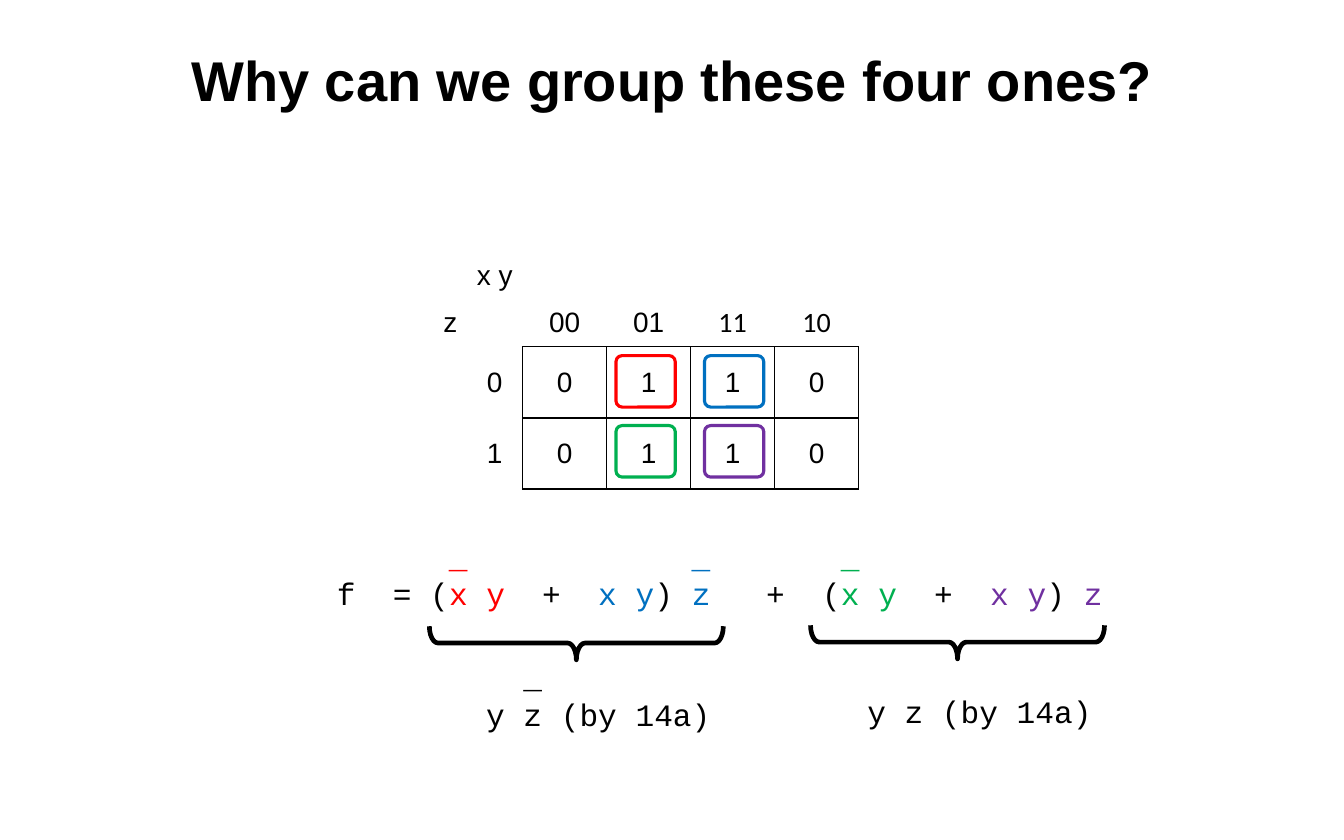
from lxml import etree
from pptx import Presentation
from pptx import util as u
from pptx.dml.color import RGBColor
from pptx.enum import shapes, text
from pptx.oxml.ns import qn

COLORS = {"black": "000000", "white": "FFFFFF", "red": "FF0000",
          "blue": "0070C0", "green": "00B050", "purple": "7030A0"}
MAP_ROWS = [["", "x y", "", "", "", ""],
            ["z", "", "00", "01", "11", "10"],
            ["", "0", "0", "1", "1", "0"],
            ["", "1", "0", "1", "1", "0"]]
BARS = [(6, "_", "red"), (19, "_", "blue"), (27, "_", "green")]
FORMULA = [(0, "f", "black"), (3, "= (", "black"), (6, "x y", "red"),
           (11, "+", "black"), (14, "x y", "blue"), (17, ") ", "black"),
           (19, "z", "blue"), (23, "+", "black"), (26, "(", "black"),
           (27, "x y", "green"), (32, "+", "black"), (35, "x y", "purple"),
           (38, ") ", "black"), (40, "z", "purple")]


def grid(value):
    """Turn grid units, 72 across and 45 down, into a length."""
    return u.Inches(value / 6)


def rgb(name):
    """Look up a colour by name."""
    return RGBColor.from_string(COLORS[name])


def style_font(font, name, size, color="black", bold=False):
    """Format a font in one go."""
    font.name, font.size, font.bold = name, u.Pt(size), bold
    font.color.rgb = rgb(color)


def add_title(slide, box, wording):
    """Place and format the title placeholder."""
    title = slide.shapes.title
    title.left, title.top, title.width, title.height = map(grid, box)
    title.text_frame.text = wording
    title.text_frame.vertical_anchor = text.MSO_ANCHOR.MIDDLE
    paragraph = title.text_frame.paragraphs[0]
    paragraph.alignment = text.PP_ALIGN.CENTER
    style_font(paragraph.runs[0].font, "Arial", 36, bold=True)


def in_map(row, column):
    """Tell whether a cell holds a value of the function."""
    return row >= 2 and column >= 2


def set_borders(cell, row, column):
    """Draw black edges around values and white edges elsewhere."""
    properties = cell._tc.get_or_add_tcPr()
    neighbours = {"L": (0, -1), "R": (0, 1), "T": (-1, 0), "B": (1, 0)}
    for position, (side, (down, across)) in enumerate(neighbours.items()):
        dark = in_map(row, column) or in_map(row + down, column + across)
        line = etree.Element(qn(f"a:ln{side}"), w=str(u.Pt(1)))
        fill = etree.SubElement(line, qn("a:solidFill"))
        etree.SubElement(fill, qn("a:srgbClr"), val=COLORS["black" if dark else "white"])
        properties.insert(position, line)


def add_outline(slide, kind, box, color, width):
    """Add an unfilled preset shape."""
    shape = slide.shapes.add_shape(kind, *map(grid, box))
    shape.shadow.inherit = False
    shape.fill.background()
    shape.line.color.rgb = rgb(color)
    shape.line.width = u.Pt(width)
    return shape


def add_map(slide, box):
    """Add the Karnaugh map and the loops around its ones."""
    left, top, width, height = box
    table = slide.shapes.add_table(4, 6, *map(grid, box)).table
    for column, share in zip(table.columns, [2, 2, 3, 3, 3, 3]):
        column.width = grid(width * share / 16)
    for row, share in zip(table.rows, [0.2, 0.2, 0.3, 0.3]):
        row.height = grid(height * share)
    for row, values in enumerate(MAP_ROWS):
        for column, value in enumerate(values):
            cell = table.cell(row, column)
            cell.margin_left = grid(1.25 if value == "z" else 0)
            cell.margin_right = cell.margin_top = cell.margin_bottom = 0
            cell.vertical_anchor = text.MSO_ANCHOR.MIDDLE
            cell.fill.solid()
            cell.fill.fore_color.rgb = rgb("white")
            cell.text_frame.text = value
            paragraph = cell.text_frame.paragraphs[0]
            paragraph.alignment = text.PP_ALIGN.CENTER
            for run in paragraph.runs:
                style_font(run.font, "Calibri" if value in ("11", "10") else "Arial", 18)
            set_borders(cell, row, column)
    for index, color in enumerate(["red", "blue", "green", "purple"]):
        row, column = divmod(index, 2)
        loop = add_outline(slide, shapes.MSO_SHAPE.ROUNDED_RECTANGLE,
                           (left + 11 + 4.74 * column, top + 5.55 + 3.75 * row, 3.18, 2.76),
                           color, 2)
        loop.adjustments[0] = 0.12


def add_code_lines(slide, box, lines):
    """Set pieces of text at character columns, with tab stops for the gaps."""
    frame = slide.shapes.add_textbox(*map(grid, box)).text_frame
    frame.word_wrap = True
    for index, pieces in enumerate(lines):
        paragraph = frame.add_paragraph() if index else frame.paragraphs[0]
        stops = etree.SubElement(paragraph._p.get_or_add_pPr(), qn("a:tabLst"))
        end = 0
        for column, wording, color in pieces:
            run = paragraph.add_run()
            run.text = ("\t" if column > end else "") + wording
            style_font(run.font, "Courier New", 20, color)
            if column > end:
                etree.SubElement(stops, qn("a:tab"), pos=str(grid(column)), algn="l")
            end = column + len(wording)


def add_term(slide, box, lines):
    """Add a brace that opens upwards, with the simplified term under it."""
    left, top, width, height = box
    brace = add_outline(slide, shapes.MSO_SHAPE.RIGHT_BRACE,
                        (left + (width - height) / 2, top + (height - width) / 2, height, width),
                        "black", 3)
    brace.rotation = 90
    brace.adjustments[0] = 0.26
    label_height = 0.83 + 1.89 * len(lines)
    add_code_lines(slide, (left + 2.45, top + 6 - label_height, 13.32, label_height), lines)


def main():
    """Build the slide."""
    presentation = Presentation()
    presentation.slide_width, presentation.slide_height = grid(72), grid(45)
    slide = presentation.slides.add_slide(presentation.slide_layouts[5])
    add_title(slide, (0, 2, 72, 4.5), "Why can we group these four ones?")
    add_map(slide, (22, 13.5, 24, 12.7))
    add_code_lines(slide, (17.46, 28.5, 43.62, 4.62), [BARS, FORMULA])
    term = [(0, "y z (by 14a)", "black")]
    add_term(slide, (23, 33.55, 15.75, 1.8), [[(2, "_", "black")], term])
    add_term(slide, (43.42, 33.5, 15.75, 1.8), [term])
    presentation.save("out.pptx")


if __name__ == "__main__":
    main()
